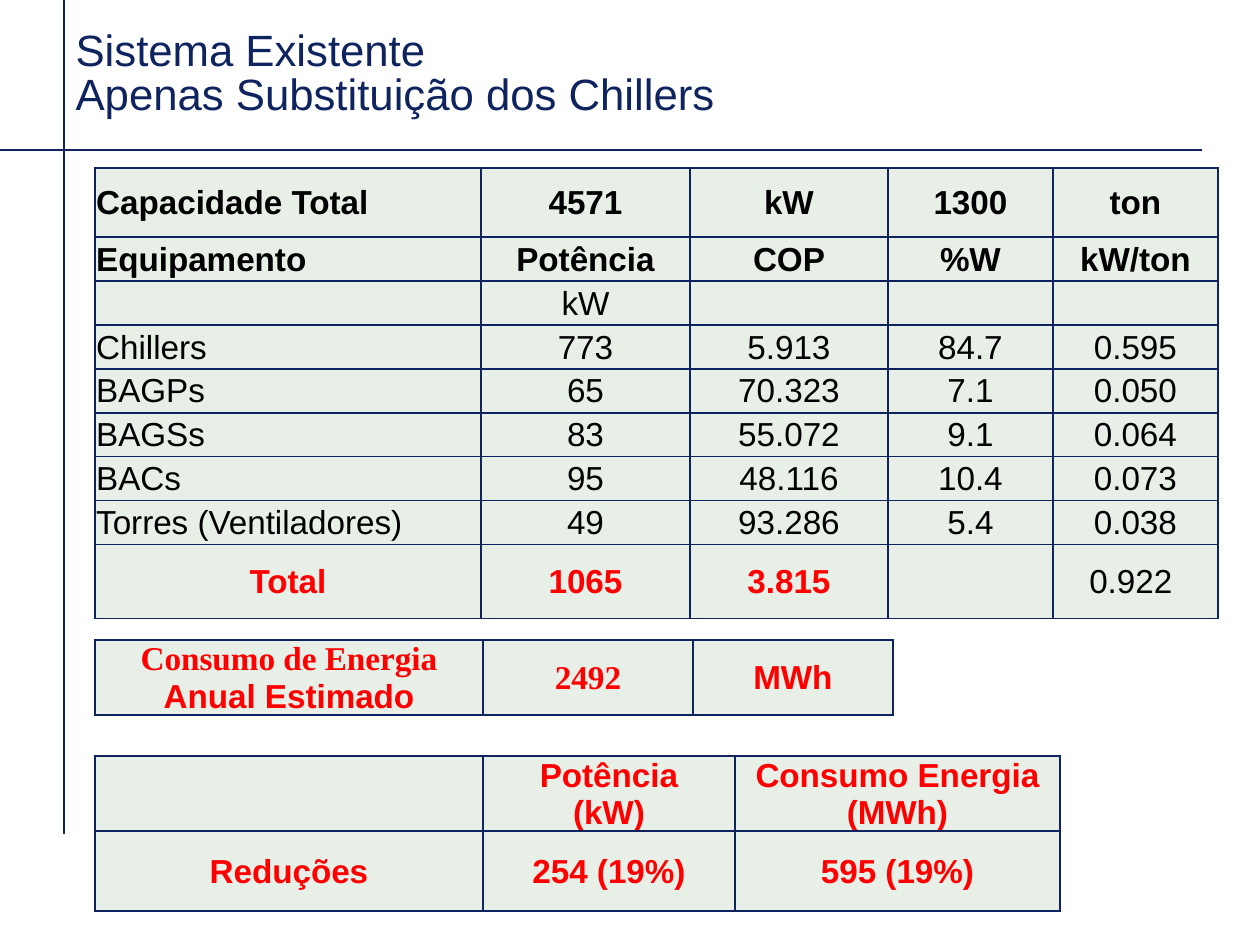
from lxml.etree import SubElement
from pptx import Presentation
from pptx.dml.color import RGBColor
from pptx.enum.shapes import MSO_CONNECTOR
from pptx.enum.text import MSO_ANCHOR, MSO_AUTO_SIZE, PP_ALIGN
from pptx.oxml import parse_xml
from pptx.oxml.ns import nsdecls, qn
from pptx.util import Emu, Inches, Pt

NAVY = RGBColor(0x0F, 0x24, 0x5F)
PALE = RGBColor(0xE7, 0xEF, 0xE7)
BLACK = RGBColor(0, 0, 0)
RED = RGBColor(0xFF, 0, 0)
SANS, SERIF = "Arial", "Times New Roman"

EQUIPMENT = [
    ["Capacidade Total", "4571", "kW", "1300", "ton"],
    ["Equipamento", "Potência", "COP", "%W", "kW/ton"],
    ["", "kW", "", "", ""],
    ["Chillers", "773", "5.913", "84.7", "0.595"],
    ["BAGPs", "65", "70.323", "7.1", "0.050"],
    ["BAGSs", "83", "55.072", "9.1", "0.064"],
    ["BACs", "95", "48.116", "10.4", "0.073"],
    ["Torres (Ventiladores)", "49", "93.286", "5.4", "0.038"],
    ["Total", "1065", "3.815", "", "0.922\u00a0"],
]
CONSUMPTION = [["Consumo de Energia\nAnual Estimado", "2492", "MWh"]]
SAVINGS = [
    ["", "Potência\n(kW)", "Consumo Energia\n(MWh)"],
    ["Reduções", "254 (19%)", "595 (19%)"],
]
SERIF_LINES = {"Consumo de Energia", "2492"}


def px(n):
    return Emu(round(n * 914400 / 126))


def add_rule(s, x1, y1, x2, y2):
    line = s.shapes.add_connector(MSO_CONNECTOR.STRAIGHT, px(x1), px(y1), px(x2), px(y2))
    line.line.color.rgb = NAVY
    line.line.width = Pt(0.75)
    SubElement(line._element.spPr, qn("a:effectLst"))


def add_title(s, x, y, w, h):
    sp = s.shapes.title
    sp.left, sp.top, sp.width, sp.height = px(x), px(y), px(w), px(h)
    tf = sp.text_frame
    tf.word_wrap = True
    tf.auto_size = MSO_AUTO_SIZE.NONE
    tf.vertical_anchor = MSO_ANCHOR.BOTTOM
    p = tf.paragraphs[0]
    p.text = "Sistema Existente\vApenas Substituição dos Chillers"
    p.alignment = PP_ALIGN.LEFT
    p.line_spacing = 0.85
    p.font.name, p.font.size, p.font.color.rgb = SANS, Pt(25), NAVY


def format_cell(cell):
    cell.margin_left = cell.margin_right = cell.margin_top = Inches(0.01)
    cell.margin_bottom = 0
    cell.vertical_anchor = MSO_ANCHOR.MIDDLE
    cell.fill.solid()
    cell.fill.fore_color.rgb = PALE
    # Borders come before the fill in the cell properties
    tc_pr = cell._tc.get_or_add_tcPr()
    for i, side in enumerate("LRTB"):
        tc_pr.insert(i, parse_xml(
            f'<a:ln{side} {nsdecls("a")} w="12700"><a:solidFill>'
            f'<a:srgbClr val="{NAVY}"/></a:solidFill></a:ln{side}>'))


def write_cell(cell, text, color, bold, align):
    tf = cell.text_frame
    tf.text = text
    for p in tf.paragraphs:
        p.alignment = align
        p.font.name = SERIF if p.text in SERIF_LINES else SANS
        p.font.size = Pt(19)
        p.font.bold = bold
        p.font.color.rgb = color


def add_grid(s, x, y, cols, rows, data, style):
    """Table whose style(row, col) gives text colour, weight and alignment."""
    frame = s.shapes.add_table(len(rows), len(cols), px(x), px(y), px(sum(cols)), px(sum(rows)))
    table = frame.table
    table.first_row = table.horz_banding = False
    for column, w in zip(table.columns, cols):
        column.width = px(w)
    for row, h in zip(table.rows, rows):
        row.height = px(h)
    for r, values in enumerate(data):
        for c, text in enumerate(values):
            cell = table.cell(r, c)
            format_cell(cell)
            write_cell(cell, text, *style(r, c))


def equipment_style(r, c):
    total = r == len(EQUIPMENT) - 1
    red = total and c < 4
    align = PP_ALIGN.LEFT if c == 0 and not total else PP_ALIGN.CENTER
    return RED if red else BLACK, red or r < 2, align


def result_style(r, c):
    return RED, True, PP_ALIGN.CENTER


def build_slide(prs):
    s = prs.slides.add_slide(prs.slide_layouts[5])
    # Frame rules and title
    add_rule(s, 64, 834, 64, 0)
    add_rule(s, 0, 150, 1202, 150)
    add_title(s, 63, 31, 955, 95)
    # Equipment, yearly consumption and savings
    left = 95
    add_grid(s, left, 168, [386, 209, 198, 165, 165], [69] + [44] * 7 + [74],
             EQUIPMENT, equipment_style)
    add_grid(s, left, 640, [388, 210, 200], [75], CONSUMPTION, result_style)
    add_grid(s, left, 756, [388, 252, 325], [75, 80], SAVINGS, result_style)


def main():
    prs = Presentation()
    prs.slide_width, prs.slide_height = Inches(10), Inches(7.5)
    build_slide(prs)
    prs.save("out.pptx")


if __name__ == "__main__":
    main()
